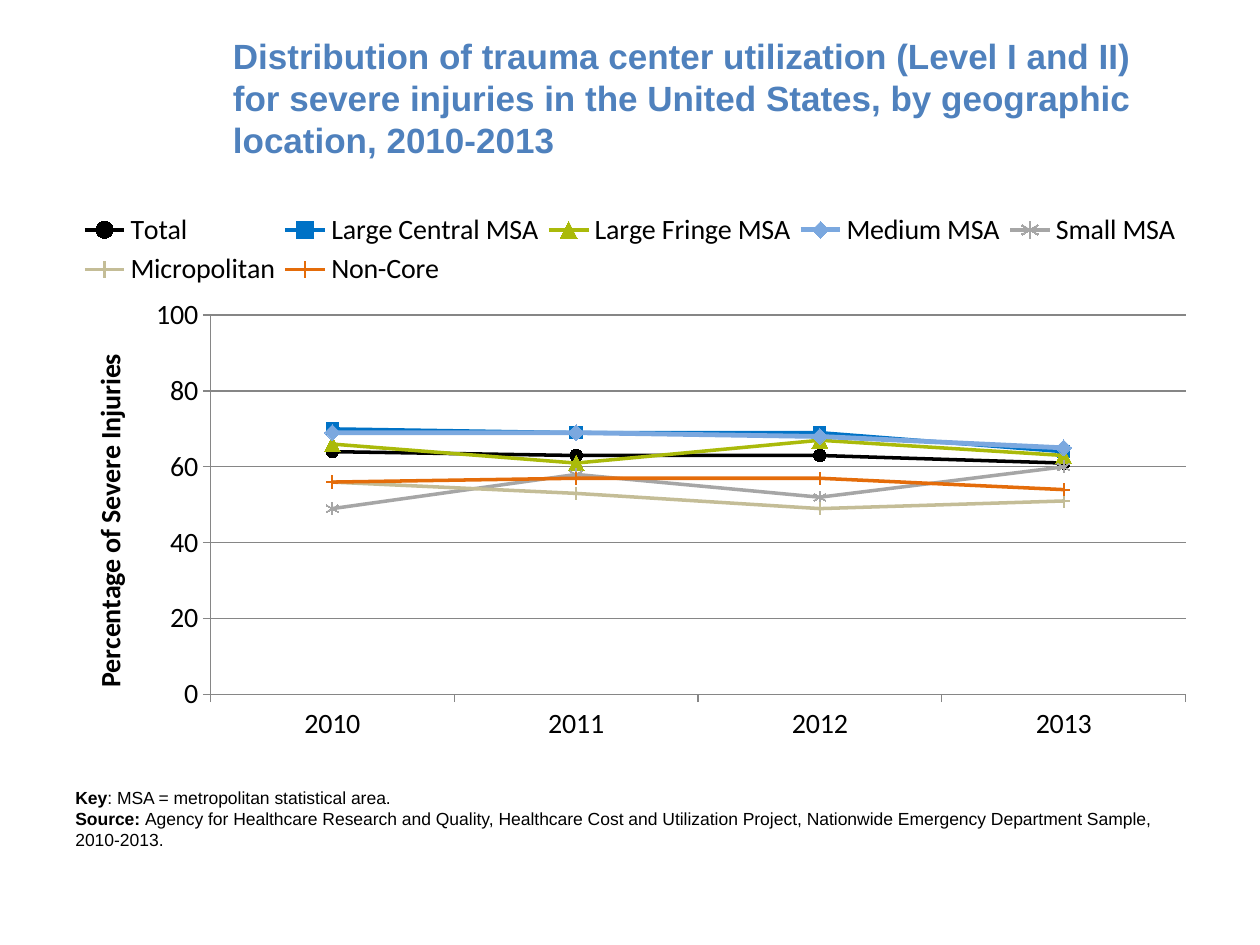
from dataclasses import dataclass

from lxml import etree
from pptx import Presentation
from pptx.chart.data import CategoryChartData
from pptx.dml.color import RGBColor
from pptx.enum.chart import XL_CHART_TYPE, XL_LEGEND_POSITION, XL_MARKER_STYLE, XL_TICK_MARK
from pptx.enum.text import MSO_ANCHOR
from pptx.oxml.ns import qn
from pptx.util import Inches, Pt

LINE_MARKERS = XL_CHART_TYPE.LINE_MARKERS
LEGEND_TOP = XL_LEGEND_POSITION.TOP
TICK_OUTSIDE = XL_TICK_MARK.OUTSIDE
MIDDLE = MSO_ANCHOR.MIDDLE
CIRCLE, SQUARE = XL_MARKER_STYLE.CIRCLE, XL_MARKER_STYLE.SQUARE
TRIANGLE, DIAMOND = XL_MARKER_STYLE.TRIANGLE, XL_MARKER_STYLE.DIAMOND
STAR, PLUS = XL_MARKER_STYLE.STAR, XL_MARKER_STYLE.PLUS


@dataclass(frozen=True)
class Theme:
    heading: RGBColor = RGBColor(0x4F, 0x81, 0xBD)
    ink: RGBColor = RGBColor(0, 0, 0)
    grid: RGBColor = RGBColor(0x86, 0x86, 0x86)
    text_font: str = "Arial"
    chart_font: str = "Calibri"
    heading_size: Pt = Pt(20)
    chart_size: Pt = Pt(16)
    note_size: Pt = Pt(10)


THEME = Theme()

TITLE = ("Distribution of trauma center utilization (Level I and II) for severe injuries "
         "in the United States, by geographic location, 2010-2013")
NOTES = [
    ("Key", ": MSA = metropolitan statistical area."),
    ("Source: ", "Agency for Healthcare Research and Quality, Healthcare Cost and Utilization "
                 "Project, Nationwide Emergency Department Sample, 2010-2013."),
]
YEARS = ["2010", "2011", "2012", "2013"]
# name, values, colour, line width, marker, marker size
LOCATIONS = [
    ("Total", (64, 63, 63, 61), "000000", 2, CIRCLE, 7),
    ("Large Central MSA", (70, 69, 69, 64), "0072C6", 2, SQUARE, 7),
    ("Large Fringe MSA", (66, 61, 67, 63), "AABA0A", 2, TRIANGLE, 9),
    ("Medium MSA", (69, 69, 68, 65), "7BA8DF", 2.75, DIAMOND, 9),
    ("Small MSA", (49, 58, 52, 60), "A6A6A6", 2, STAR, 7),
    ("Micropolitan", (56, 53, 49, 51), "C4BD97", 2, PLUS, 7),
    ("Non-Core", (56, 57, 57, 54), "E46C0A", 2, PLUS, 7),
]


def style_font(font, name, size, color, bold=None):
    font.name, font.size, font.bold = name, size, bold
    font.color.rgb = color


def add_text_frame(slide, box):
    frame = slide.shapes.add_textbox(*box).text_frame
    frame.word_wrap = True
    return frame


def add_title(slide, box):
    frame = add_text_frame(slide, box)
    frame.vertical_anchor = MIDDLE
    heading = frame.paragraphs[0]
    heading.text = TITLE
    style_font(heading.font, THEME.text_font, THEME.heading_size, THEME.heading, True)


def add_notes(slide, box):
    frame = add_text_frame(slide, box)
    for index, (label, body) in enumerate(NOTES):
        note = frame.add_paragraph() if index else frame.paragraphs[0]
        style_font(note.font, THEME.text_font, THEME.note_size, THEME.ink)
        label_run = note.add_run()
        label_run.text = label
        label_run.font.bold = True
        note.add_run().text = body


def set_layout(element, index, inner=False, **fractions):
    """Place a chart part by fractions of the chart area."""
    for old in element.findall(qn("c:layout")):
        element.remove(old)
    layout = etree.Element(qn("c:layout"))
    manual = etree.SubElement(layout, qn("c:manualLayout"))
    if inner:
        etree.SubElement(manual, qn("c:layoutTarget")).set("val", "inner")
    for key in ("x", "y"):
        etree.SubElement(manual, qn(f"c:{key}Mode")).set("val", "edge")
    for key, value in fractions.items():
        etree.SubElement(manual, qn(f"c:{key}")).set("val", str(value))
    element.insert(index, layout)


def style_axes(chart):
    percent_axis = chart.value_axis
    percent_axis.minimum_scale, percent_axis.maximum_scale = 0, 100
    percent_axis.major_unit = 20
    percent_axis.has_major_gridlines = True
    percent_axis.major_gridlines.format.line.color.rgb = THEME.grid
    percent_axis.tick_labels.number_format = "0"
    percent_axis.tick_labels.number_format_is_linked = False
    for axis in (percent_axis, chart.category_axis):
        axis.major_tick_mark = TICK_OUTSIDE
        axis.format.line.color.rgb = THEME.grid
        style_font(axis.tick_labels.font, THEME.chart_font, THEME.chart_size, THEME.ink)

    title = percent_axis.axis_title
    caption = title.text_frame.paragraphs[0]
    caption.text = "Percentage of Severe Injuries"
    style_font(caption.font, THEME.chart_font, THEME.chart_size, THEME.ink, True)
    body = title.text_frame._txBody.find(qn("a:bodyPr"))
    body.set("rot", "-5400000")
    body.set("vert", "horz")
    set_layout(title._element, 1, x=0.02, y=0.26)


def style_series(series, color, width, marker, size):
    series.smooth = False
    series.format.line.color.rgb = color
    series.format.line.width = Pt(width)
    series.marker.style, series.marker.size = marker, size
    if marker in (STAR, PLUS):
        series.marker.format.fill.background()
    else:
        series.marker.format.fill.solid()
        series.marker.format.fill.fore_color.rgb = color
    series.marker.format.line.color.rgb = color


def add_utilization_chart(slide, box):
    data = CategoryChartData(number_format="0")
    data.categories = YEARS
    for name, values, *_ in LOCATIONS:
        data.add_series(name, values)
    chart = slide.shapes.add_chart(LINE_MARKERS, *box, data).chart
    chart.has_title = False
    style_font(chart.font, THEME.text_font, THEME.note_size, THEME.ink)
    plot = chart.plots[0]
    plot.vary_by_categories = False
    for series, (_, _, color, *look) in zip(plot.series, LOCATIONS):
        style_series(series, RGBColor.from_string(color), *look)
    style_axes(chart)

    chart.has_legend = True
    legend = chart.legend
    legend.position = LEGEND_TOP
    legend.include_in_layout = False
    style_font(legend.font, THEME.chart_font, THEME.chart_size, THEME.ink)
    set_layout(legend._element, 1, x=0.01, y=0.01, w=0.98, h=0.15)
    plot_area = chart._chartSpace.find(".//" + qn("c:plotArea"))
    set_layout(plot_area, 0, inner=True, x=0.13, y=0.2, w=0.86, h=0.67)


def main():
    deck = Presentation()
    deck.slide_width, deck.slide_height = Inches(10), Inches(7.5)
    slide = deck.slides.add_slide(deck.slide_layouts[6])
    margin, width = Inches(0.5), Inches(9)
    add_title(slide, (Inches(1.75), Inches(0.3), Inches(7.75), Inches(0.95)))
    add_notes(slide, (margin, Inches(6.2), width, Inches(0.77)))
    add_utilization_chart(slide, (margin, Inches(1.6), width, Inches(4.5)))
    deck.save("out.pptx")


if __name__ == "__main__":
    main()
